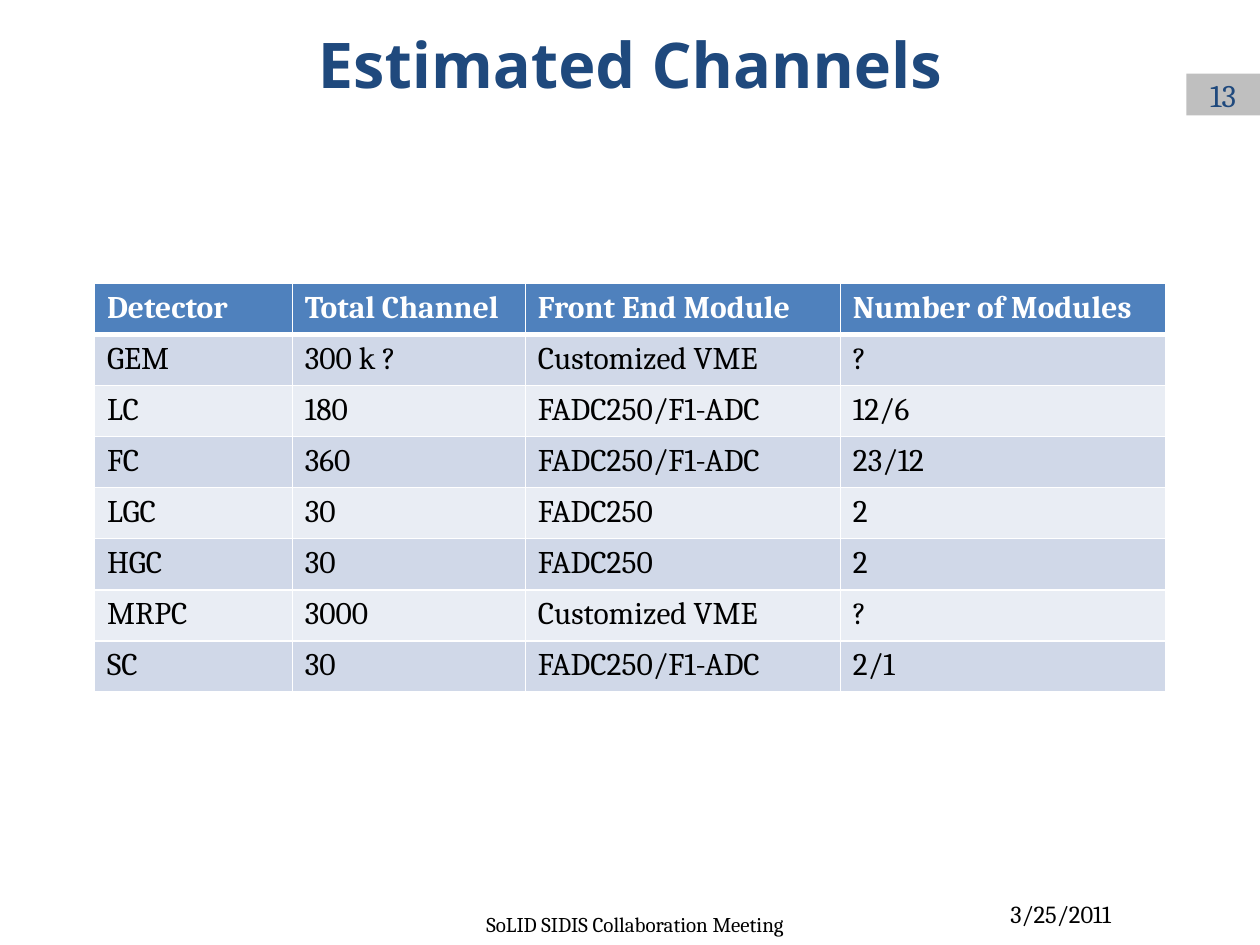
import pptx
import pptx.dml.color
import pptx.enum.shapes
import pptx.enum.text
import pptx.oxml
import pptx.oxml.ns
import pptx.util

RGBColor = pptx.dml.color.RGBColor
Align = pptx.enum.text.PP_ALIGN
Anchor = pptx.enum.text.MSO_ANCHOR

WHITE = RGBColor(0xFF, 0xFF, 0xFF)
BLACK = RGBColor(0x00, 0x00, 0x00)
NAVY = RGBColor(0x1F, 0x49, 0x7D)
GREY = RGBColor(0xBF, 0xBF, 0xBF)
HEADER_BLUE = RGBColor(0x4F, 0x81, 0xBD)
BAND_DARK = RGBColor(0xD0, 0xD8, 0xE8)
BAND_LIGHT = RGBColor(0xE9, 0xED, 0xF4)

WIDTH = pptx.util.Inches(10)
HEIGHT = pptx.util.Inches(7.5)
COLUMN = WIDTH / 120
ROW = HEIGHT / 90

SERIF = "Cambria"
SANS = "Open Sans"
COLUMN_INCHES = (1.57, 1.85, 2.5, 2.58)
CHANNELS = (
    ("Detector", "Total Channel", "Front End Module", "Number of Modules"),
    ("GEM", "300 k ?", "Customized VME", "?"),
    ("LC", "180", "FADC250/F1-ADC", "12/6"),
    ("FC", "360", "FADC250/F1-ADC", "23/12"),
    ("LGC", "30", "FADC250", "2"),
    ("HGC", "30", "FADC250", "2"),
    ("MRPC", "3000", "Customized VME", "?"),
    ("SC", "30", "FADC250/F1-ADC", "2/1"),
)


def grid_box(left, top, columns, rows):
    return (round(left * COLUMN), round(top * ROW),
            round(columns * COLUMN), round(rows * ROW))


def write(frame, text, size, color, align=Align.LEFT, name=SERIF, bold=False):
    para = frame.paragraphs[0]
    para.text = text
    para.alignment = align
    para.font.size = pptx.util.Pt(size)
    para.font.name = name
    para.font.bold = bold
    para.font.color.rgb = color


def add_label(page, box, text, size, color, align, **style):
    frame = page.shapes.add_textbox(*box).text_frame
    frame.word_wrap = True
    frame.vertical_anchor = Anchor.MIDDLE
    write(frame, text, size, color, align, **style)


def add_page_number(page, box, text):
    badge = page.shapes.add_shape(
        pptx.enum.shapes.MSO_SHAPE.RECTANGLE, *box)
    badge.shadow.inherit = False
    badge.fill.solid()
    badge.fill.fore_color.rgb = GREY
    badge.line.fill.background()
    badge.text_frame.vertical_anchor = Anchor.MIDDLE
    write(badge.text_frame, text, 18, NAVY, Align.CENTER)


def set_borders(cell, top, bottom):
    properties = cell._tc.get_or_add_tcPr()
    widths = (("lnL", 1), ("lnR", 1), ("lnT", top), ("lnB", bottom))
    for position, (tag, width) in enumerate(widths):
        properties.insert(position, pptx.oxml.parse_xml(
            f'<a:{tag} {pptx.oxml.ns.nsdecls("a")} w="{pptx.util.Pt(width)}">'
            f'<a:solidFill><a:srgbClr val="{WHITE}"/></a:solidFill></a:{tag}>'))


def add_channel_table(page, box):
    table = page.shapes.add_table(len(CHANNELS), len(COLUMN_INCHES), *box).table
    for column, inches in zip(table.columns, COLUMN_INCHES):
        column.width = pptx.util.Inches(inches)
    for row_index, values in enumerate(CHANNELS):
        header = row_index == 0
        band = BAND_DARK if row_index % 2 else BAND_LIGHT
        for column_index, value in enumerate(values):
            cell = table.cell(row_index, column_index)
            cell.fill.solid()
            cell.fill.fore_color.rgb = HEADER_BLUE if header else band
            set_borders(cell, 3 if row_index == 1 else 1, 3 if header else 1)
            write(cell.text_frame, value, 18, WHITE if header else BLACK,
                  bold=header)


def add_footer(page, box):
    left, top, columns, rows = box
    add_label(page, grid_box(left + 59, top, 17, rows),
              "3/25/2011", 14, BLACK, Align.RIGHT)
    add_label(page, grid_box(left, top + 1, columns - 17, rows),
              "SoLID SIDIS Collaboration Meeting", 12, BLACK, Align.CENTER)


def main():
    deck = pptx.Presentation()
    deck.slide_width = WIDTH
    deck.slide_height = HEIGHT
    page = deck.slides.add_slide(deck.slide_layouts[6])
    add_page_number(page, grid_box(113, 7, 7, 4), "13")
    add_label(page, grid_box(9, 1, 102, 10), "Estimated Channels", 36, NAVY,
              Align.CENTER, name=SANS, bold=True)
    add_channel_table(page, grid_box(9, 27, 102, 38.9))
    add_footer(page, (31, 85, 76, 4))
    deck.save("out.pptx")


if __name__ == "__main__":
    main()
